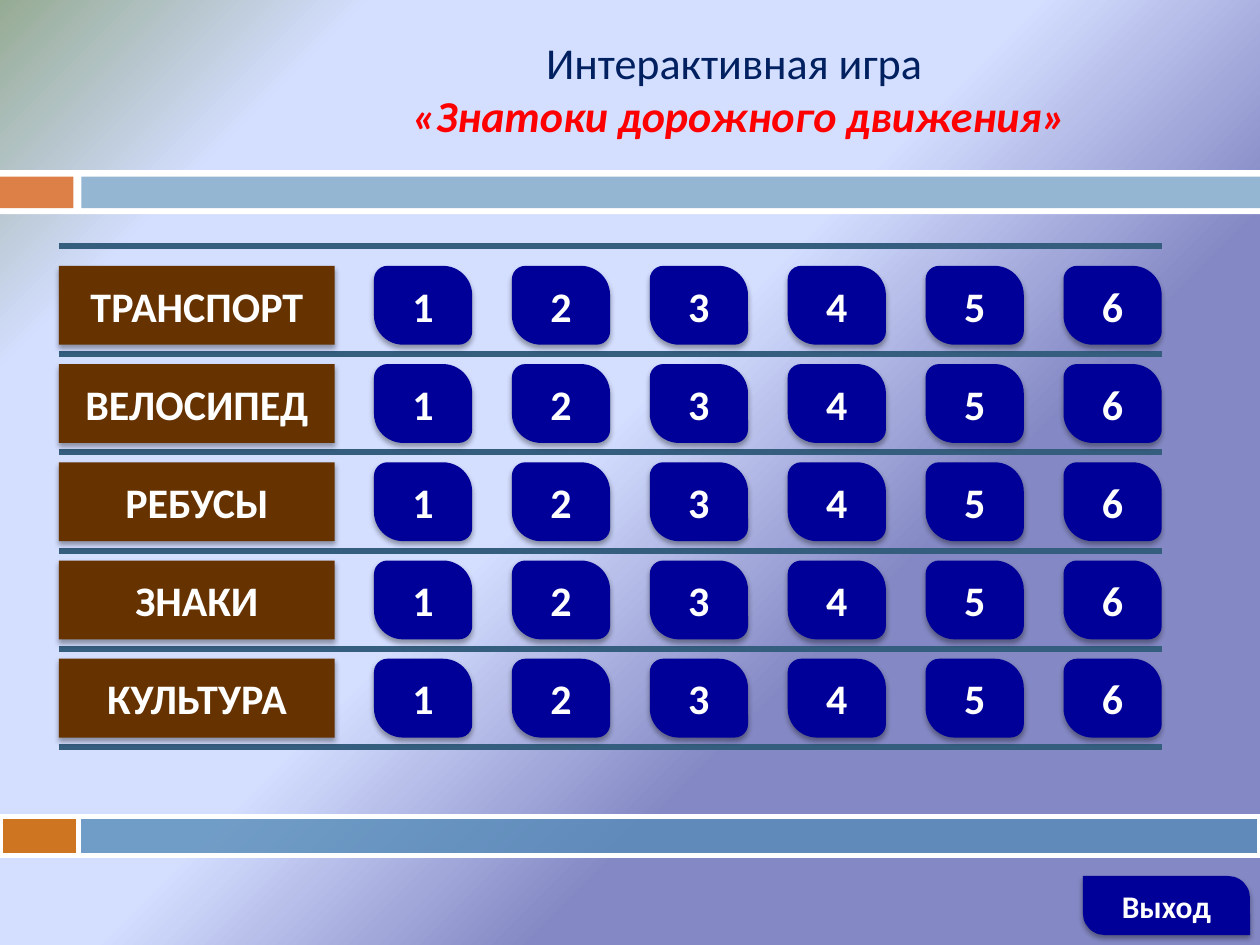
"""Build the menu slide of a road safety quiz game."""
from dataclasses import dataclass
from typing import Optional

import pptx
import pptx.dml.color
import pptx.enum.shapes
import pptx.enum.text
import pptx.oxml
import pptx.oxml.ns
import pptx.slide
import pptx.text.text
import pptx.util
from lxml import etree

Cm = pptx.util.Cm
Pt = pptx.util.Pt
Color = pptx.dml.color.RGBColor
Kind = pptx.enum.shapes.MSO_SHAPE
qn = pptx.oxml.ns.qn

WHITE = Color(0xFF, 0xFF, 0xFF)
NAVY = Color(0x00, 0x20, 0x60)
RED = Color(0xFF, 0x00, 0x00)
BLUE = Color(0x00, 0x00, 0x99)
BROWN = Color(0x66, 0x33, 0x00)
TEAL = Color(0x35, 0x5D, 0x7E)
CORAL = Color(0xDD, 0x80, 0x47)
SKY = Color(0x94, 0xB6, 0xD2)
AMBER = Color(0xCC, 0x66, 0x00)
STEEL = Color(0x55, 0x8B, 0xB8)
STOPS = (
    (33, Color(0x84, 0x88, 0xC4)),
    (53, Color(0xD4, 0xDE, 0xFF)),
    (83, Color(0xD4, 0xDE, 0xFF)),
    (100, Color(0x96, 0xAB, 0x94)),
)

FONT = "Calibri"
TOPICS = ("ТРАНСПОРТ", "ВЕЛОСИПЕД", "РЕБУСЫ", "ЗНАКИ", "КУЛЬТУРА")
COUNT = 6
LEFT, RIGHT = 1.19, 23.42
TOP, HIGH, STEP = 5.36, 1.59, 1.98
FIRST, WIDE, PITCH = 7.54, 1.98, 2.78


@dataclass(frozen=True)
class Bar:
    """A plain band, placed in centimetres."""
    left: float
    top: float
    width: float
    height: float
    fill: Color
    alpha: Optional[int] = None


@dataclass(frozen=True)
class Tile:
    """A labelled tile with a soft shadow, placed in centimetres."""
    text: str
    left: float
    top: float
    width: float
    height: float
    fill: Color
    size: int = 24
    bends: tuple[float, ...] = ()


BARS = (
    Bar(0, 3.43, 25.4, 0.89, WHITE),
    Bar(0, 3.56, 1.48, 0.64, CORAL),
    Bar(1.64, 3.56, 23.76, 0.64, SKY),
    Bar(0, 16.46, 1.58, 0.79, AMBER, 87),
    Bar(1.58, 16.46, 23.82, 0.79, STEEL, 78),
)


def paint_back(slide: pptx.slide.Slide) -> None:
    """Fill the background with a gradient from the lower right corner."""
    stops = "".join(
        f'<a:gs pos="{spot * 1000}"><a:srgbClr val="{tone}"/></a:gs>' for spot, tone in STOPS
    )
    slide.element.cSld.insert(0, pptx.oxml.parse_xml(
        f'<p:bg {pptx.oxml.ns.nsdecls("p", "a")}><p:bgPr><a:gradFill rotWithShape="1">'
        f'<a:gsLst>{stops}</a:gsLst><a:path path="circle">'
        '<a:fillToRect l="100000" t="100000"/></a:path></a:gradFill>'
        '<a:effectLst/></p:bgPr></p:bg>'
    ))


def add_run(para: pptx.text.text._Paragraph, text: str, size: float, tone: Color,
            bold: bool = False, slant: bool = False) -> None:
    """Append one styled run."""
    run = para.add_run()
    run.text = text
    font = run.font
    font.name, font.size, font.bold, font.italic = FONT, Pt(size), bold, slant
    font.color.rgb = tone


def add_title(slide: pptx.slide.Slide) -> None:
    """Place the two-line title."""
    title = slide.shapes.title
    title.left, title.top, title.width, title.height = Cm(6.76), Cm(0.58), Cm(16.28), Cm(2.39)
    frame = title.text_frame
    frame.word_wrap = True
    frame.auto_size = pptx.enum.text.MSO_AUTO_SIZE.NONE
    frame.vertical_anchor = pptx.enum.text.MSO_ANCHOR.MIDDLE
    para = frame.paragraphs[0]
    para.alignment = pptx.enum.text.PP_ALIGN.CENTER
    add_run(para, "Интерактивная игра ", 25.2, NAVY)
    para.add_line_break()
    add_run(para, "«Знатоки дорожного движения»", 25.2, RED, True, True)


def add_bar(slide: pptx.slide.Slide, bar: Bar) -> None:
    """Draw a band, outlined in white when it is see-through."""
    shape = slide.shapes.add_shape(
        Kind.RECTANGLE, Cm(bar.left), Cm(bar.top), Cm(bar.width), Cm(bar.height))
    shape.shadow.inherit = False
    shape.fill.solid()
    shape.fill.fore_color.rgb = bar.fill
    if bar.alpha is None:
        shape.line.fill.background()
        return
    shape.line.color.rgb = WHITE
    shape.line.width = Pt(3)
    tone = shape.element.spPr.find(qn("a:solidFill")).find(qn("a:srgbClr"))
    etree.SubElement(tone, qn("a:alpha"), val=str(bar.alpha * 1000))


def add_rule(slide: pptx.slide.Slide, top: float) -> None:
    """Draw a line across the board."""
    rule = slide.shapes.add_connector(
        pptx.enum.shapes.MSO_CONNECTOR.STRAIGHT, Cm(LEFT), Cm(top), Cm(RIGHT), Cm(top))
    rule.line.color.rgb = TEAL
    rule.line.width = Pt(3.5)
    etree.SubElement(rule.element.spPr, qn("a:effectLst"))


def add_tile(slide: pptx.slide.Slide, tile: Tile) -> None:
    """Draw a tile with its label."""
    kind = Kind.ROUND_2_DIAG_RECTANGLE if tile.bends else Kind.RECTANGLE
    shape = slide.shapes.add_shape(
        kind, Cm(tile.left), Cm(tile.top), Cm(tile.width), Cm(tile.height))
    for index, bend in enumerate(tile.bends):
        shape.adjustments[index] = bend
    shape.fill.solid()
    shape.fill.fore_color.rgb = tile.fill
    shape.line.fill.background()
    shape.shadow.inherit = False
    shade = etree.SubElement(
        shape.element.spPr.find(qn("a:effectLst")), qn("a:outerShdw"),
        blurRad=str(Pt(3)), dist=str(Pt(2)), dir="5400000", rotWithShape="0")
    tone = etree.SubElement(shade, qn("a:srgbClr"), val="000000")
    etree.SubElement(tone, qn("a:alpha"), val="35000")
    frame = shape.text_frame
    frame.vertical_anchor = pptx.enum.text.MSO_ANCHOR.MIDDLE
    para = frame.paragraphs[0]
    para.alignment = pptx.enum.text.PP_ALIGN.CENTER
    add_run(para, tile.text, tile.size, WHITE, True)


def main() -> None:
    """Build and save the slide."""
    deck = pptx.Presentation()
    deck.slide_width, deck.slide_height = Cm(25.4), Cm(19.05)
    slide = deck.slides.add_slide(deck.slide_layouts[5])
    paint_back(slide)
    add_title(slide)
    for bar in BARS:
        add_bar(slide, bar)
    add_rule(slide, 4.95)
    for row, topic in enumerate(TOPICS):
        top = TOP + row * STEP
        add_rule(slide, top + 1.78)
        add_tile(slide, Tile(topic, LEFT, top, 5.56, HIGH, BROWN))
        for col in range(COUNT):
            add_tile(slide, Tile(str(col + 1), FIRST + col * PITCH, top, WIDE, HIGH, BLUE,
                                 bends=(0.17, 0.37)))
    add_tile(slide, Tile("Выход", 21.83, 17.66, 3.37, 1.19, BLUE, 18, (0, 0.37)))
    deck.save("out.pptx")


if __name__ == "__main__":
    main()
